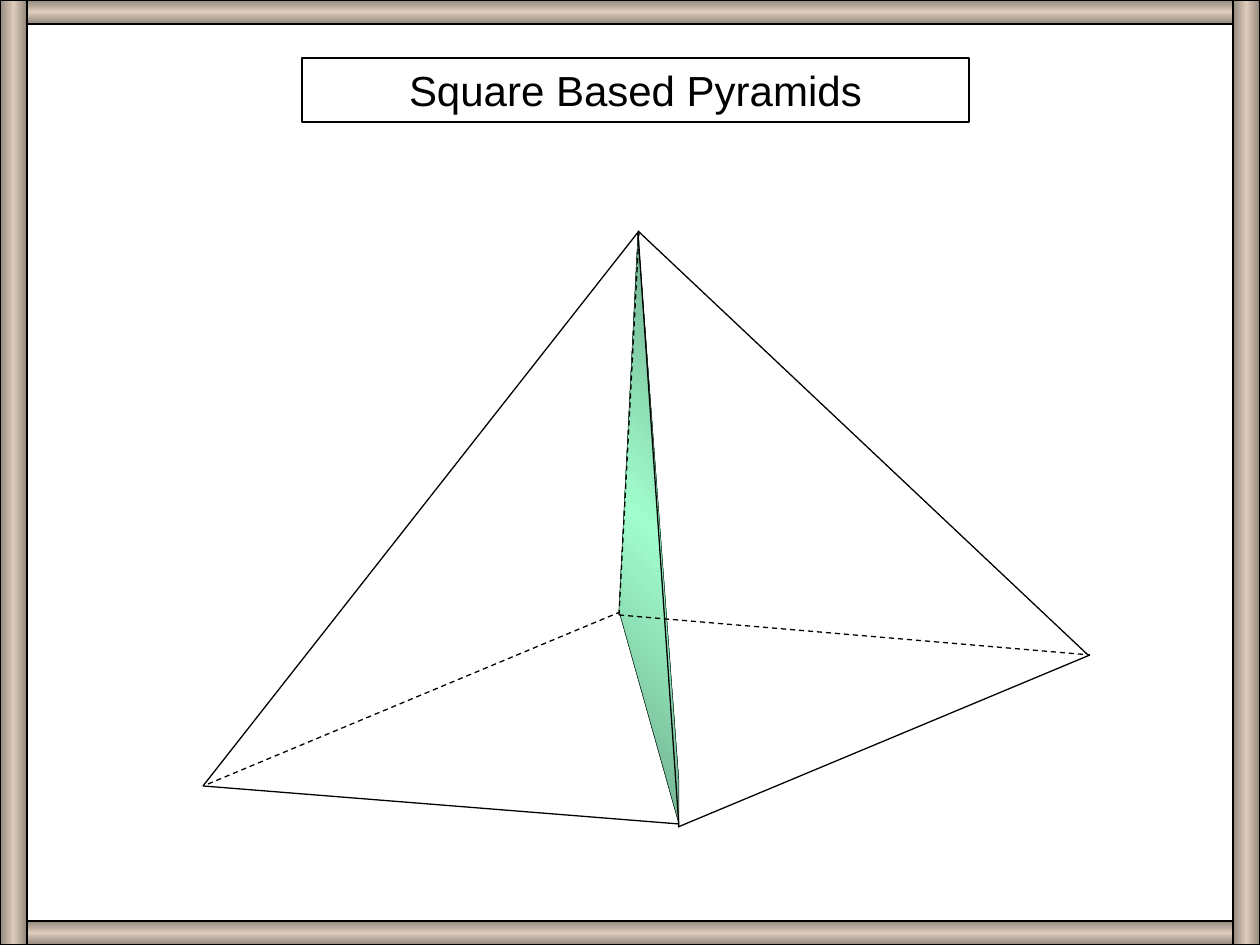
from copy import deepcopy

from lxml import etree
from pptx import Presentation
from pptx import util as u
from pptx.dml.color import RGBColor
from pptx.enum import dml, shapes, text
from pptx.oxml.ns import qn

PX = 914400 / 126
W, H = 1260, 945
BLACK = RGBColor(0x00, 0x00, 0x00)
GREEN = RGBColor(0x6B, 0xA8, 0x88)
LIGHT_GREEN = RGBColor(0xA1, 0xFD, 0xCD)
BROWN = RGBColor(0x93, 0x87, 0x7D)
LIGHT_BROWN = RGBColor(0xDE, 0xCC, 0xBC)


def px(*values):
    return [u.Emu(round(v * PX)) for v in values]


def style(sp, width, outer=None, inner=None, angle=0):
    """Black outline, with a gradient outer-inner-outer or no fill."""
    sp.shadow.inherit = False
    sp.line.color.rgb = BLACK
    sp.line.width = u.Pt(width)
    if outer is None:
        sp.fill.background()
        return
    sp.fill.gradient()
    sp.fill.gradient_angle = angle
    stops = sp._element.spPr.find(".//" + qn("a:gsLst"))
    stops.append(deepcopy(stops[0]))
    for stop, color, position in zip(sp.fill.gradient_stops,
                                     (outer, inner, outer), (0, 0.5, 1)):
        stop.color.rgb = color
        stop.position = position


prs = Presentation()
prs.slide_width, prs.slide_height = px(W, H)
s = prs.slides.add_slide(prs.slide_layouts[6])

# Diagonal section of the pyramid
fb = s.shapes.build_freeform(679, 824, scale=PX)
fb.add_line_segments([(679, 782), (638, 233), (619, 611)], close=True)
style(fb.convert_to_shape(), 0.25, GREEN, LIGHT_GREEN, 45)

# Pyramid edges: x1, y1, x2, y2, hidden
edges = [
    (203, 786, 679, 824, False),
    (678, 827, 1090, 655, False),
    (208, 784, 620, 612, True),
    (619, 615, 1090, 655, True),
    (679, 827, 638, 233, False),
    (619, 615, 639, 233, True),
    (203, 786, 639, 231, False),
    (1088, 655, 638, 231, False),
]
for *ends, hidden in edges:
    edge = s.shapes.add_connector(shapes.MSO_CONNECTOR.STRAIGHT, *px(*ends))
    edge.line.color.rgb = BLACK
    edge.line.width = u.Pt(0.75)
    if hidden:
        edge.line.dash_style = dml.MSO_LINE.DASH
    etree.SubElement(edge._element.spPr, qn("a:effectLst"))

# Title
sp = s.shapes.add_shape(shapes.MSO_SHAPE.RECTANGLE, *px(302, 58, 667, 64))
style(sp, 0.75)
tf = sp.text_frame
tf.word_wrap = True
tf.vertical_anchor = text.MSO_ANCHOR.MIDDLE
p = tf.paragraphs[0]
p.text = "Square Based Pyramids"
p.alignment = text.PP_ALIGN.CENTER
p.font.name = "Arial"
p.font.size = u.Pt(24)
p.font.color.rgb = BLACK

# Frame: left, top, width, height, gradient angle
BAR, POST = 24, 27
frame = [
    (0, 0, W, BAR, 90),
    (0, H - BAR, W, BAR, 90),
    (0, 0, POST, H, 0),
    (W - POST, 0, POST, H, 0),
]
for *box, angle in frame:
    sp = s.shapes.add_shape(shapes.MSO_SHAPE.RECTANGLE, *px(*box))
    style(sp, 0.75, BROWN, LIGHT_BROWN, angle)

prs.save("out.pptx")
